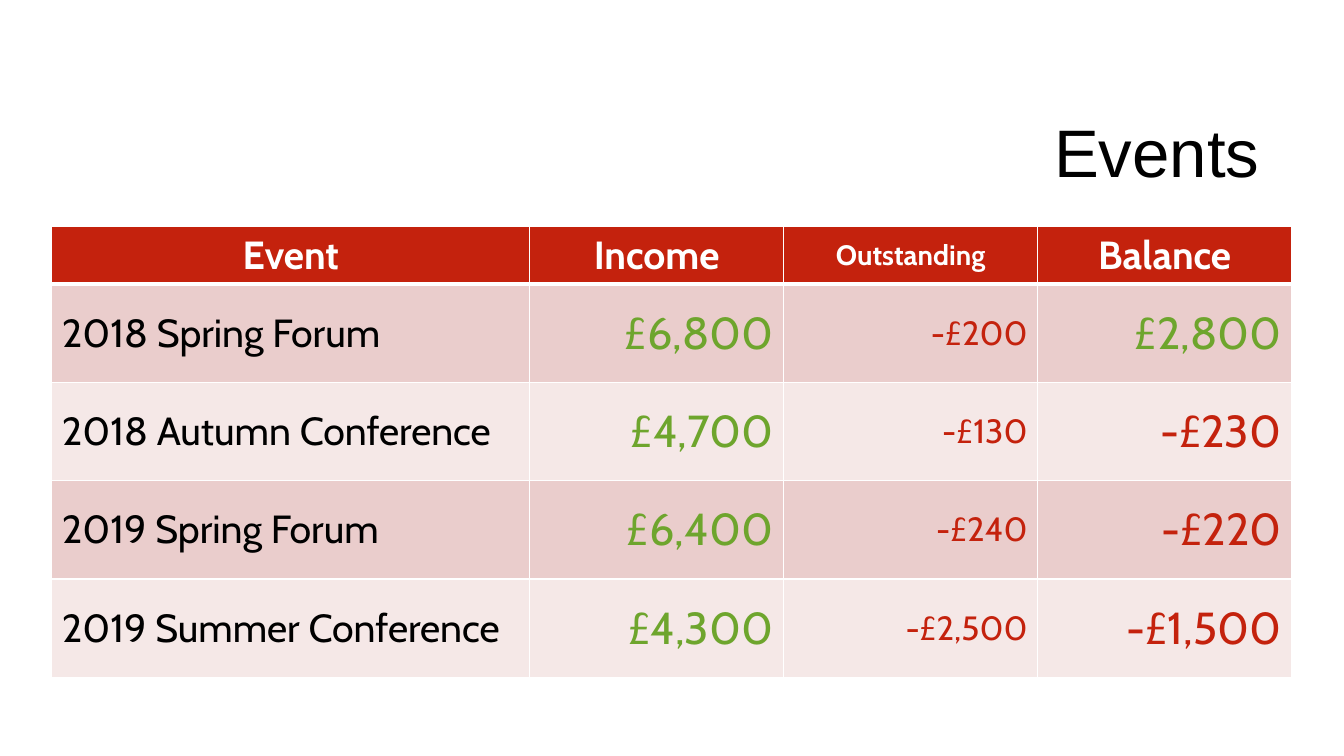
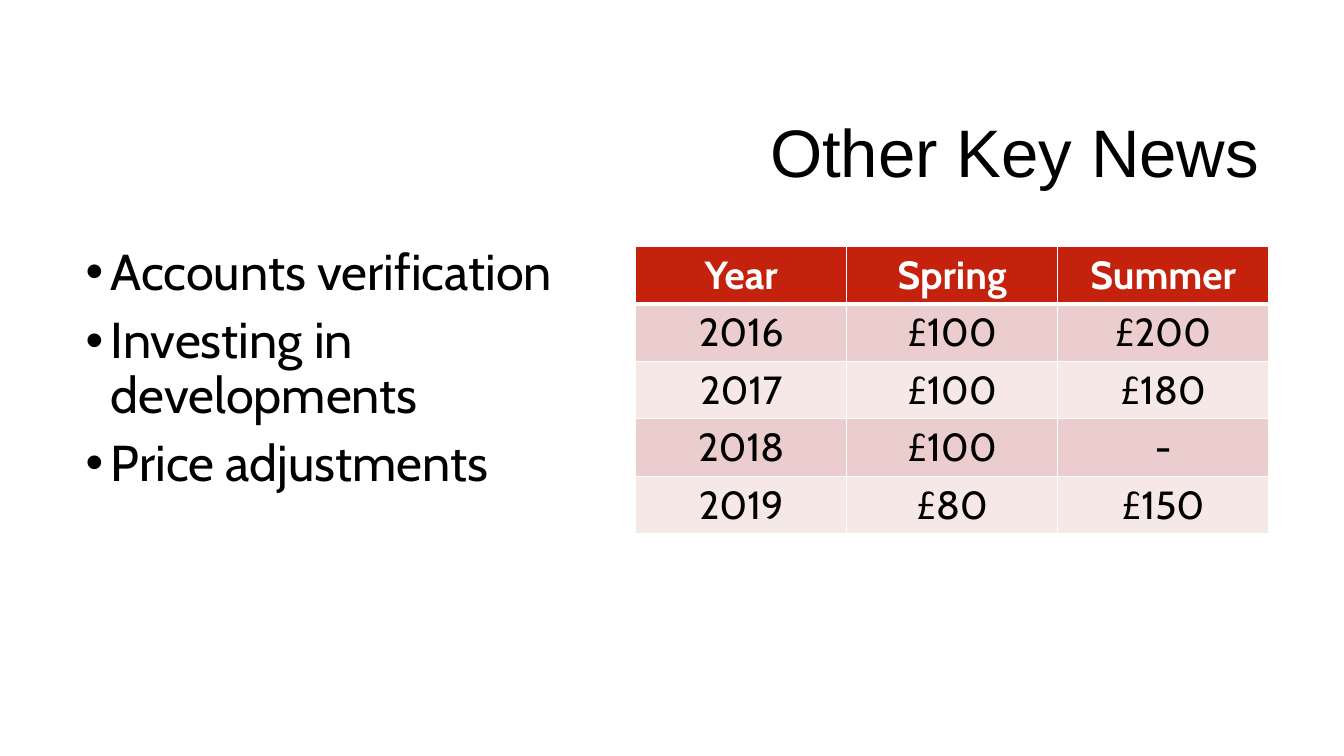
from lxml.etree import SubElement
from pptx import Presentation
from pptx.dml.color import RGBColor
from pptx.enum.text import MSO_ANCHOR as Anchor, PP_ALIGN as Align
from pptx.oxml.ns import qn
from pptx.util import Emu, Inches, Pt

COLOURS = {
    "text": "000000",
    "header_text": "FFFFFF",
    "header": "C4220D",
    "odd_row": "EACDCC",
    "even_row": "F5E8E7",
    "border": "FFFFFF",
    "gain": "6EA52D",
    "loss": "C4220D",
}
TITLE_FONT, BODY_FONT = "Arial", "Cabin"
WIDTH, HEIGHT = Inches(13.33), Inches(7.5)
TITLE_AREA = (23.8, 11.2, 70.65, 18.8)
BODY_AREA = (5.63, 32, 38, 58.7)
HEADER_ROW = 7.6

EVENTS = [
    ("Event", "Income", "Outstanding", "Balance"),
    ("2018 Spring Forum", "£6,800", "-£200", "£2,800"),
    ("2018 Autumn Conference", "£4,700", "-£130", "-£230"),
    ("2019 Spring Forum", "£6,400", "-£240", "-£220"),
    ("2019 Summer Conference", "£4,300", "-£2,500", "-£1,500"),
]
PRICES = [
    ("Year", "Spring", "Summer"),
    ("2016", "£100", "£200"),
    ("2017", "£100", "£180"),
    ("2018", "£100", "-"),
    ("2019", "£80", "£150"),
]
NEWS = ["Accounts verification", "Investing in developments", "Price adjustments"]


def across(percent):
    """Return a share of the slide's width."""
    return Emu(round(WIDTH * percent / 100))


def down(percent):
    """Return a share of the slide's height."""
    return Emu(round(HEIGHT * percent / 100))


def place(left, top, width, height):
    """Turn percentages into a position and a size."""
    return across(left), down(top), across(width), down(height)


def add_run(paragraph, text, size, colour="text", font=BODY_FONT, bold=False):
    """Add one styled run to a paragraph."""
    run = paragraph.add_run()
    run.text = text
    run.font.name = font
    run.font.size = Pt(size)
    run.font.bold = bold
    run.font.color.rgb = RGBColor.from_string(COLOURS[colour])


def add_text_frame(slide, area, anchor):
    """Add a wrapping text box and return its text frame."""
    frame = slide.shapes.add_textbox(*place(*area)).text_frame
    frame.word_wrap = True
    frame.vertical_anchor = anchor
    return frame


def add_titled_slide(presentation, title):
    """Add a blank slide with the shared right-aligned title."""
    slide = presentation.slides.add_slide(presentation.slide_layouts[6])
    paragraph = add_text_frame(slide, TITLE_AREA, Anchor.MIDDLE).paragraphs[0]
    paragraph.alignment = Align.RIGHT
    paragraph.line_spacing = 0.9
    add_run(paragraph, title, 48, font=TITLE_FONT)
    return slide


def add_bullets(slide, area, items):
    """Add a bulleted list with a hanging indent."""
    frame = add_text_frame(slide, area, Anchor.TOP)
    for index, item in enumerate(items):
        paragraph = frame.add_paragraph() if index else frame.paragraphs[0]
        properties = paragraph._p.get_or_add_pPr()
        properties.set("marL", str(Inches(0.25)))
        properties.set("indent", str(-Inches(0.25)))
        SubElement(properties, qn("a:buFont"), typeface="Arial")
        SubElement(properties, qn("a:buChar"), char="•")
        paragraph.line_spacing = 0.9
        if index:
            paragraph.space_before = Pt(10)
        add_run(paragraph, item, 36)


def set_borders(cell, top=1, bottom=1):
    """Draw white lines around a cell, with widths in points."""
    properties = cell._tc.get_or_add_tcPr()
    for side, width in (("L", 1), ("R", 1), ("T", top), ("B", bottom)):
        line = SubElement(properties, qn(f"a:ln{side}"), w=str(Pt(width)))
        fill = SubElement(line, qn("a:solidFill"))
        SubElement(fill, qn("a:srgbClr"), val=COLOURS["border"])


def fill_cell(cell, row, text, style, anchor):
    """Fill one cell with its background, borders and text."""
    is_header = row == 0
    set_borders(cell, top=3 if row == 1 else 1, bottom=3 if is_header else 1)
    background = "header" if is_header else "odd_row" if row % 2 else "even_row"
    cell.fill.solid()
    cell.fill.fore_color.rgb = RGBColor.from_string(COLOURS[background])
    cell.vertical_anchor = anchor
    align, size, colour = style
    paragraph = cell.text_frame.paragraphs[0]
    paragraph.alignment = align
    add_run(paragraph, text, size, colour, bold=is_header)


def add_styled_table(slide, left, top, widths, row_height, rows, style_of, anchor):
    """Add a banded table whose cell styles come from a rule."""
    height = HEADER_ROW + row_height * (len(rows) - 1)
    area = place(left, top, sum(widths), height)
    table = slide.shapes.add_table(len(rows), len(widths), *area).table
    for column, width in zip(table.columns, widths):
        column.width = across(width)
    for row, texts in enumerate(rows):
        table.rows[row].height = down(row_height if row else HEADER_ROW)
        for column, text in enumerate(texts):
            style = style_of(row, column, text)
            fill_cell(table.cell(row, column), row, text, style, anchor)


def event_style(row, column, text):
    """Return alignment, size and colour for the events table."""
    is_outstanding = column == 2
    if row == 0:
        return Align.CENTER, 20 if is_outstanding else 28, "header_text"
    if column == 0:
        return Align.LEFT, 28, "text"
    colour = "loss" if text.startswith("-") else "gain"
    return Align.RIGHT, 24 if is_outstanding else 32, colour


def price_style(row, column, text):
    """Return alignment, size and colour for the price table."""
    return Align.CENTER, 28, "text" if row else "header_text"


def main():
    """Build both slides and save the presentation."""
    presentation = Presentation()
    presentation.slide_width, presentation.slide_height = WIDTH, HEIGHT

    events = add_titled_slide(presentation, "Events")
    event_widths = [35.56] + [18.9] * 3
    add_styled_table(events, 3.85, 30, event_widths, 13, EVENTS,
                     event_style, Anchor.MIDDLE)

    news = add_titled_slide(presentation, "Other Key News")
    add_bullets(news, BODY_AREA, NEWS)
    add_styled_table(news, 47.3, 32.6, [15.7] * 3, HEADER_ROW, PRICES,
                     price_style, Anchor.TOP)

    presentation.save("out.pptx")


if __name__ == "__main__":
    main()
